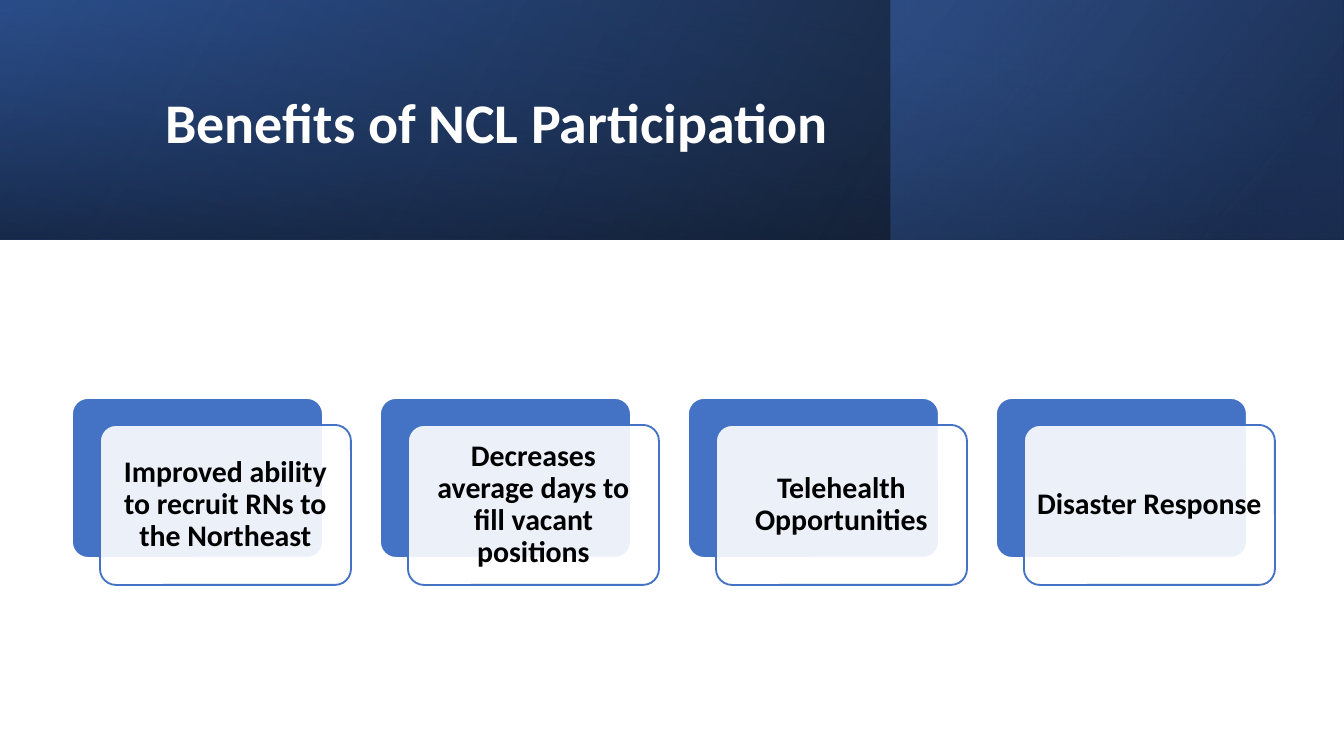
from dataclasses import dataclass

from lxml.etree import SubElement
from pptx import Presentation
from pptx.dml.color import RGBColor
from pptx.enum.shapes import MSO_SHAPE as Preset
from pptx.enum.text import MSO_ANCHOR as Anchor, MSO_AUTO_SIZE as AutoSize, PP_ALIGN as Align
from pptx.oxml.ns import qn
from pptx.shapes.autoshape import Shape
from pptx.slide import Slide
from pptx.text.text import TextFrame
from pptx.util import Emu, Pt

PX_PER_INCH = 134.4
FONT = "Calibri"
WHITE = RGBColor(0xFF, 0xFF, 0xFF)
BLACK = RGBColor(0x00, 0x00, 0x00)
BLUE = RGBColor(0x44, 0x72, 0xC4)
DEEP_BLUE = RGBColor(0x2F, 0x55, 0x97)
NAVY = RGBColor(0x20, 0x38, 0x64)

CARD_LEFT, CARD_TOP, CARD_PITCH = 72, 398, 308
CARD_WIDTH, CARD_HEIGHT = 251, 160
FRONT_DX, FRONT_DY = 28, 27
CARD_INSET = 8


@dataclass
class Stop:
    position: int
    color: RGBColor
    opacity: int = 100


@dataclass
class Band:
    left: int
    top: int
    width: int
    height: int
    angle: int
    stops: tuple[Stop, Stop]
    rotation: int = 0


BANDS = (
    Band(0, 0, 1344, 240, 330, (Stop(0, BLACK, 96), Stop(100, DEEP_BLUE))),
    Band(891, 0, 452, 240, 320, (Stop(19, NAVY, 68), Stop(100, BLUE, 48))),
    Band(552, -552, 240, 1344, 350, (Stop(23, DEEP_BLUE, 16), Stop(99, BLACK, 45)), 270),
)
BENEFITS = (
    "Improved ability to recruit RNs to the Northeast",
    "Decreases average days to fill vacant positions",
    "Telehealth Opportunities",
    "Disaster Response",
)


def px(length: int) -> Emu:
    return Emu(round(length * 914400 / PX_PER_INCH))


def add_alpha(color_element, opacity: int) -> None:
    SubElement(color_element, qn("a:alpha"), val=str(opacity * 1000))


def draw_band(slide: Slide, band: Band) -> None:
    panel = slide.shapes.add_shape(
        Preset.RECTANGLE, px(band.left), px(band.top), px(band.width), px(band.height))
    panel.shadow.inherit = False
    panel.line.fill.background()
    panel.rotation = band.rotation
    properties = panel._element.spPr
    properties.find(qn("a:xfrm")).set("flipH", "1")
    panel.fill.gradient()
    gradient = properties.find(qn("a:gradFill"))
    gradient.find(qn("a:lin")).set("ang", str(band.angle * 60000))
    for target, stop in zip(panel.fill.gradient_stops, band.stops):
        target.position = stop.position / 100
        target.color.rgb = stop.color
    for target, stop in zip(gradient.iter(qn("a:srgbClr")), band.stops):
        add_alpha(target, stop.opacity)


def write_text(frame: TextFrame, text: str, size: int, color: RGBColor, align: Align) -> None:
    frame.text = text
    frame.word_wrap = True
    frame.auto_size = AutoSize.NONE
    frame.vertical_anchor = Anchor.MIDDLE
    paragraph = frame.paragraphs[0]
    paragraph.alignment = align
    paragraph.line_spacing = 0.9
    font = paragraph.font
    font.name, font.size, font.bold = FONT, Pt(size), True
    font.color.rgb = color


def draw_title(slide: Slide, text: str) -> None:
    title = slide.shapes.title
    title.left, title.top, title.width, title.height = px(152), px(39), px(1071), px(173)
    write_text(title.text_frame, text, 30, WHITE, Align.LEFT)
    slide.shapes._spTree.append(title._element)


def draw_rounded(slide: Slide, left: int, top: int, fill: RGBColor, line: RGBColor) -> Shape:
    plate = slide.shapes.add_shape(
        Preset.ROUNDED_RECTANGLE, px(left), px(top), px(CARD_WIDTH), px(CARD_HEIGHT))
    plate.adjustments[0] = 0.1
    plate.shadow.inherit = False
    plate.fill.solid()
    plate.fill.fore_color.rgb = fill
    plate.line.color.rgb = line
    plate.line.width = Pt(1)
    return plate


def draw_card(slide: Slide, left: int, benefit: str) -> None:
    draw_rounded(slide, left, CARD_TOP, BLUE, WHITE)
    front = draw_rounded(slide, left + FRONT_DX, CARD_TOP + FRONT_DY, WHITE, BLUE)
    add_alpha(front._element.spPr.find(qn("a:solidFill"))[0], 90)
    frame = front.text_frame
    frame.margin_left = frame.margin_right = px(CARD_INSET)
    frame.margin_top = frame.margin_bottom = px(CARD_INSET)
    write_text(frame, benefit, 16, BLACK, Align.CENTER)


def main() -> None:
    deck = Presentation()
    deck.slide_width, deck.slide_height = px(1344), px(756)
    slide = deck.slides.add_slide(deck.slide_layouts.get_by_name("Title Only"))
    for band in BANDS:
        draw_band(slide, band)
    draw_title(slide, "Benefits of NCL Participation")
    for column, benefit in enumerate(BENEFITS):
        draw_card(slide, CARD_LEFT + column * CARD_PITCH, benefit)
    deck.save("out.pptx")


if __name__ == "__main__":
    main()
